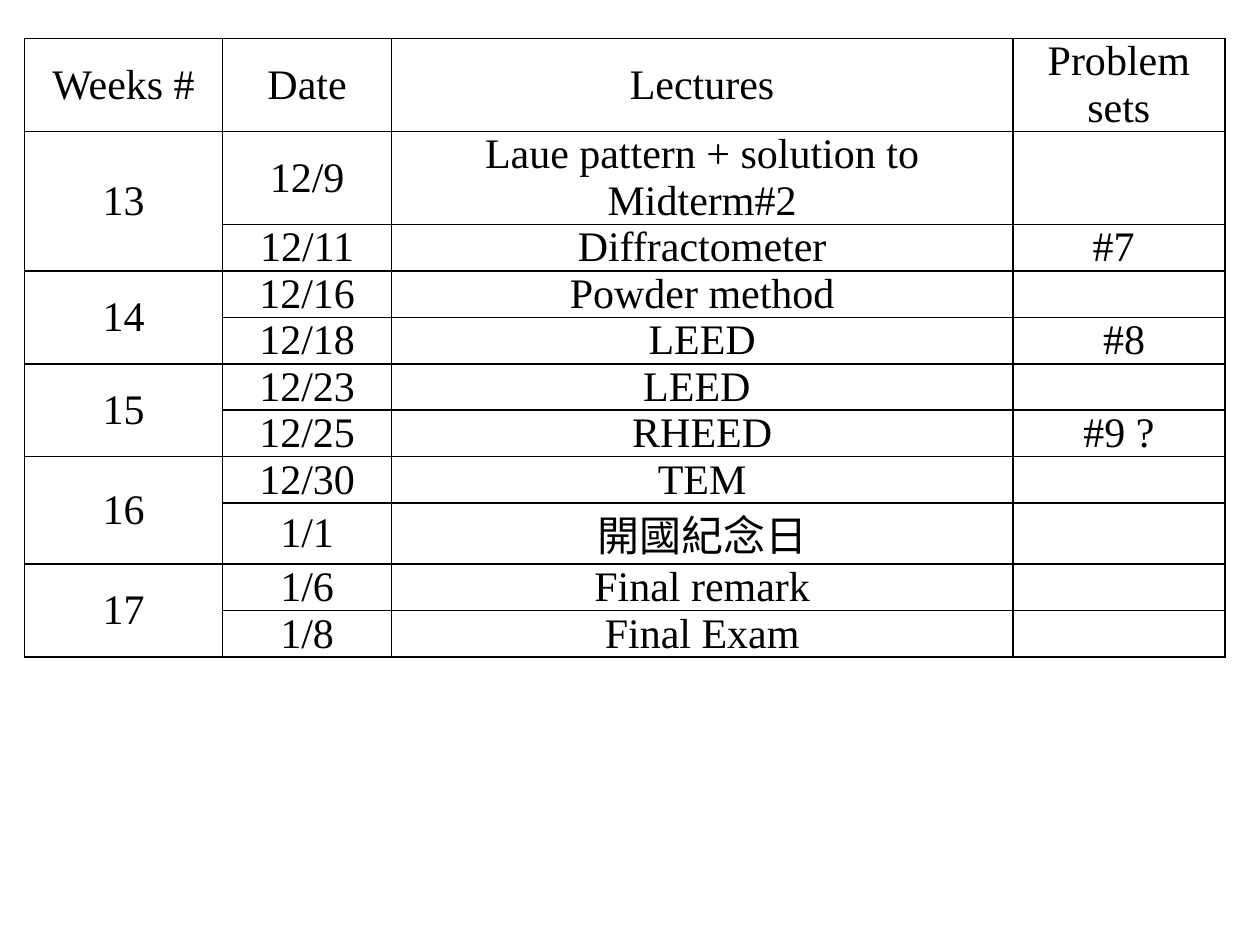
from lxml import etree
from pptx import Presentation
from pptx.dml.color import RGBColor
from pptx.enum import text
from pptx.oxml import ns
from pptx.util import Pt

BLACK = RGBColor(0, 0, 0)

HEAD = ("Weeks #", "Date", "Lectures", "Problem sets")
WEEKS = [
    ("13", [("12/9", "Laue pattern + solution to Midterm#2", ""),
            ("12/11", "Diffractometer", "#7 ")]),
    ("14", [("12/16", "Powder method", ""),
            ("12/18", "LEED", " #8")]),
    ("15", [("12/23", "LEED ", ""),
            ("12/25", "RHEED", "#9 ?")]),
    ("16", [("12/30", "TEM", ""),
            ("1/1", "開國紀念日", "")]),
    ("17", [("1/6", "Final remark", ""),
            ("1/8", "Final Exam", "")]),
]
WIDTHS = (113.25, 96.5, 355, 121.25)
LINE = 26.5
TALL = {0: 53, 1: 53, 8: 34.75}  # rows that need more than one plain line
LEFT, TOP = 14, 22

CELL = {"margin_left": Pt(1.5), "margin_right": Pt(1.5),
        "margin_top": 0, "margin_bottom": 0,
        "vertical_anchor": text.MSO_ANCHOR.MIDDLE}
FONT = {"name": "Times New Roman", "size": Pt(24), "bold": False}


def assign(obj, values):
    for name, value in values.items():
        setattr(obj, name, value)


def border(cell):
    props = cell._tc.get_or_add_tcPr()
    for i, side in enumerate(("lnL", "lnR", "lnT", "lnB")):
        line = etree.Element(ns.qn("a:" + side), w=str(Pt(1)))
        fill = etree.SubElement(line, ns.qn("a:solidFill"))
        etree.SubElement(fill, ns.qn("a:srgbClr"), val=str(BLACK))
        props.insert(i, line)


def style(cell, words):
    assign(cell, CELL)
    cell.fill.background()
    border(cell)
    para = cell.text_frame.paragraphs[0]
    para.alignment = text.PP_ALIGN.CENTER
    assign(para.font, FONT)
    if words:
        run = para.add_run()
        run.text = words
        assign(run.font, FONT)
        run.font.color.rgb = BLACK


def main():
    deck = Presentation()
    deck.slide_width, deck.slide_height = Pt(720), Pt(540)
    slide = deck.slides.add_slide(deck.slide_layouts[6])

    rows = [HEAD]
    for week, days in WEEKS:
        for i, day in enumerate(days):
            rows.append(("" if i else week, *day))
    highs = [TALL.get(i, LINE) for i in range(len(rows))]

    table = slide.shapes.add_table(
        len(rows), len(HEAD), Pt(LEFT), Pt(TOP),
        Pt(sum(WIDTHS)), Pt(sum(highs))).table
    assign(table, {"first_row": False, "horz_banding": False})
    for col, width in zip(table.columns, WIDTHS):
        col.width = Pt(width)
    for r, (row, high) in enumerate(zip(rows, highs)):
        table.rows[r].height = Pt(high)
        for c, words in enumerate(row):
            style(table.cell(r, c), words)

    top = 1
    for _, days in WEEKS:
        end = top + len(days) - 1
        table.cell(top, 0).merge(table.cell(end, 0))
        top = end + 1

    deck.save("out.pptx")


if __name__ == "__main__":
    main()
